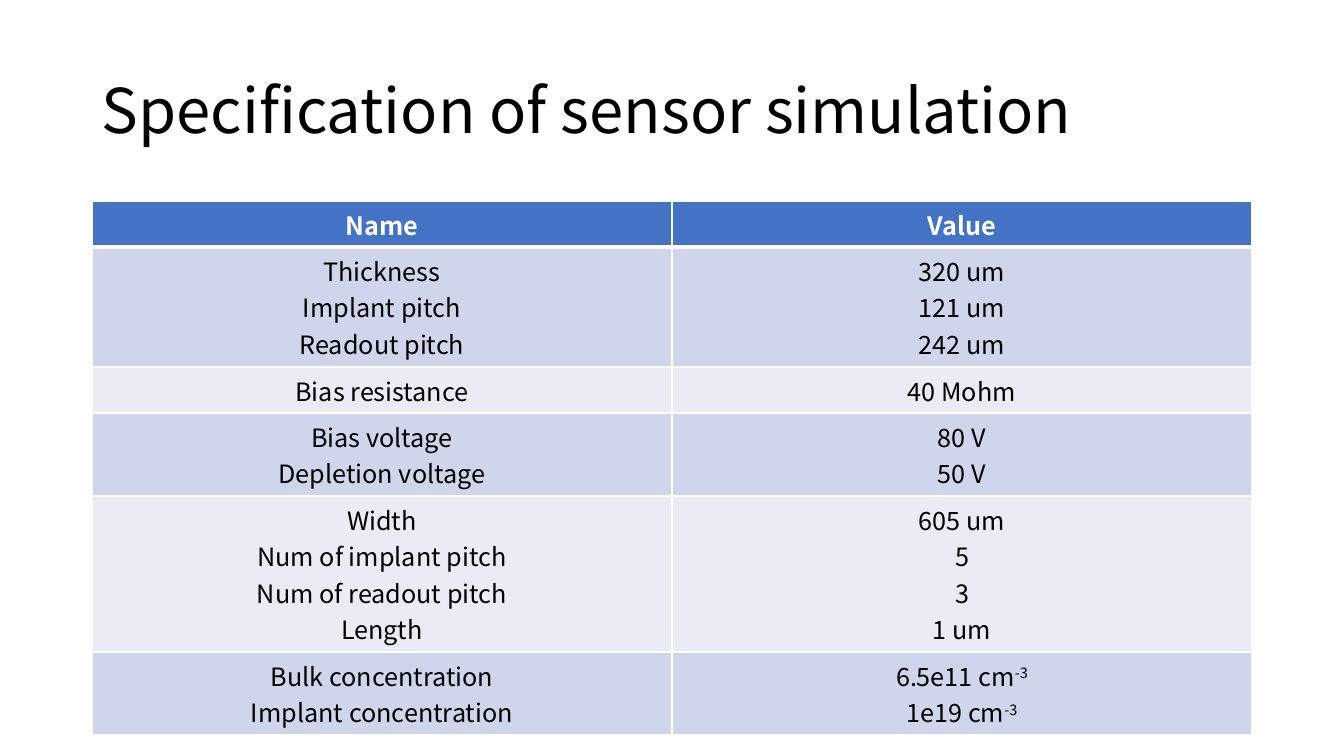
from lxml.etree import SubElement
from pptx import Presentation
from pptx.dml.color import RGBColor
from pptx.enum.text import MSO_ANCHOR, PP_ALIGN
from pptx.oxml.ns import qn
from pptx.util import Emu, Pt

FONT = "Noto Sans CJK SC"
HUES = {"text": "000000", "white": "FFFFFF", "head": "4472C4",
        "dark": "CFD5EA", "light": "E9EBF5"}
ROWS = [
    ("Name", "Value"),
    ("Thickness\nImplant pitch\nReadout pitch", "320 um\n121 um\n242 um"),
    ("Bias resistance", "40 Mohm"),
    ("Bias voltage\nDepletion voltage", "80 V\n50 V"),
    ("Width\nNum of implant pitch\nNum of readout pitch\nLength",
     "605 um\n5\n3\n1 um"),
    ("Bulk concentration\nImplant concentration",
     "6.5e11 cm^-3\n1e19 cm^-3"),
]


def px(num):
    """Turn pixels into EMU."""
    return Emu(round(num * 914400 / 100.8))


def style(para, size, hue, bold=False):
    """Format every run of a paragraph."""
    for run in para.runs:
        font = run.font
        font.name, font.size, font.bold = FONT, Pt(size), bold
        font.color.rgb = RGBColor.from_string(HUES[hue])


def add_title(slide, text):
    """Add the slide title."""
    box = slide.shapes.add_textbox(px(92), px(41), px(1160), px(146))
    frame = box.text_frame
    frame.word_wrap = True
    frame.vertical_anchor = MSO_ANCHOR.MIDDLE
    para = frame.paragraphs[0]
    para.text = text
    para.line_spacing = 0.9
    style(para, 44, "text")


def add_edge(cell, side, width):
    """Draw a white border on one side of a cell."""
    props = cell._tc.get_or_add_tcPr()
    line = SubElement(props, qn("a:ln" + side), w=str(Pt(width)))
    fill = SubElement(line, qn("a:solidFill"))
    SubElement(fill, qn("a:srgbClr"), val=HUES["white"])


def fill_cell(cell, text, row):
    """Write and format one table cell."""
    head = row == 0
    for side in "LRTB":
        thick = (head and side == "B") or (row == 1 and side == "T")
        add_edge(cell, side, 3 if thick else 1)
    cell.fill.solid()
    hue = "head" if head else "dark" if row % 2 else "light"
    cell.fill.fore_color.rgb = RGBColor.from_string(HUES[hue])
    cell.vertical_anchor = MSO_ANCHOR.MIDDLE
    frame = cell.text_frame
    frame.text = text
    for para in frame.paragraphs:
        base, mark, power = para.text.partition("^")
        if mark:
            para.text = base
            run = para.add_run()
            run.text = power
            run._r.get_or_add_rPr().set("baseline", "30000")
        para.alignment = PP_ALIGN.CENTER
        style(para, 18, "white" if head else "text", head)


def add_specs(slide, rows):
    """Add the table of sensor values, each row as high as its lines."""
    highs = [10 + round(36.5 * len(texts[0].split("\n"))) for texts in rows]
    frame = slide.shapes.add_table(len(rows), 2, px(92), px(201),
                                   px(1160), px(sum(highs)))
    table = frame.table
    for row, texts in enumerate(rows):
        table.rows[row].height = px(highs[row])
        for col, text in enumerate(texts):
            fill_cell(table.cell(row, col), text, row)


def main():
    """Build and save the slide."""
    deck = Presentation()
    deck.slide_width, deck.slide_height = px(1344), px(756)
    slide = deck.slides.add_slide(deck.slide_layouts[6])
    add_title(slide, "Specification of sensor simulation")
    add_specs(slide, ROWS)
    deck.save("out.pptx")


if __name__ == "__main__":
    main()
